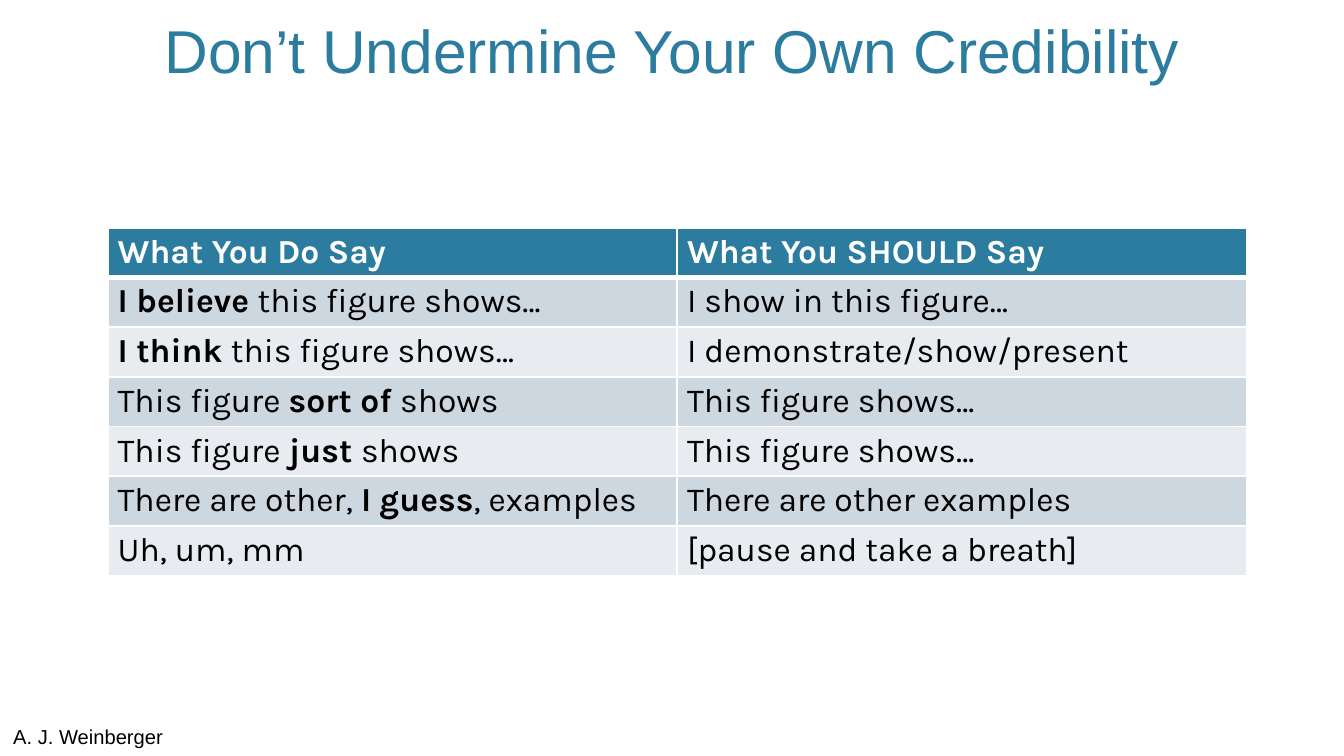
from lxml import etree
from pptx import Presentation
from pptx.dml.color import RGBColor
from pptx.enum import text as t
from pptx.oxml import ns
from pptx.util import Pt

COLORS = {"teal": "2C7C9F", "white": "FFFFFF", "black": "000000",
          "dark_band": "CDD7DF", "light_band": "E8ECF0"}

# Asterisks enclose bold words.
PHRASES = [
    ("*What You Do Say*", "*What You SHOULD Say*"),
    ("*I believe *this figure shows…", "I show in this figure…"),
    ("*I think *this figure shows…", "I demonstrate/show/present"),
    ("This figure *sort of *shows", "This figure shows…"),
    ("This figure* just *shows", "This figure shows…"),
    ("There are other, *I guess*, examples", "There are other examples"),
    ("Uh, um, mm", "[pause and take a breath]"),
]


def color(name):
    return RGBColor.from_string(COLORS[name])


def set_attributes(target, values):
    for name, value in values.items():
        setattr(target, name, value)


def write_runs(paragraph, marked_text, size, font_name, color_name):
    """Add the text as runs, in bold between asterisks."""
    for index, part in enumerate(marked_text.split("*")):
        if part:
            run = paragraph.add_run()
            run.text = part
            set_attributes(run.font, {"size": Pt(size), "name": font_name,
                                      "bold": index % 2 == 1})
            run.font.color.rgb = color(color_name)


def add_label(slide, box, label, size, color_name, alignment, anchor):
    frame = slide.shapes.add_textbox(*map(Pt, box)).text_frame
    set_attributes(frame, {"word_wrap": True, "vertical_anchor": anchor})
    paragraph = frame.paragraphs[0]
    paragraph.alignment = alignment
    write_runs(paragraph, label, size, "Arial", color_name)


def add_borders(cell, widths):
    properties = cell._tc.get_or_add_tcPr()
    for side, width in widths.items():
        line = etree.SubElement(properties, ns.qn(f"a:ln{side}"), w=str(Pt(width)))
        fill = etree.SubElement(line, ns.qn("a:solidFill"))
        etree.SubElement(fill, ns.qn("a:srgbClr"), val=COLORS["white"])


def add_phrase_table(slide, box):
    table = slide.shapes.add_table(len(PHRASES), 2, *map(Pt, box)).table
    for row_index, phrases in enumerate(PHRASES):
        is_header = row_index == 0
        band = "teal" if is_header else ("light_band", "dark_band")[row_index % 2]
        for column_index, phrase in enumerate(phrases):
            cell = table.cell(row_index, column_index)
            set_attributes(cell, {"margin_left": Pt(5.3), "margin_right": Pt(5.3),
                                  "margin_top": Pt(2.5), "margin_bottom": Pt(2.5)})
            add_borders(cell, {"L": 1, "R": 1, "T": 3 if row_index == 1 else 1,
                               "B": 3 if is_header else 1})
            cell.fill.solid()
            cell.fill.fore_color.rgb = color(band)
            write_runs(cell.text_frame.paragraphs[0], phrase, 18, "Karla",
                       "white" if is_header else "black")


def main():
    presentation = Presentation()
    set_attributes(presentation, {"slide_width": Pt(720), "slide_height": Pt(405)})
    slide = presentation.slides.add_slide(presentation.slide_layouts[6])
    add_label(slide, (0, 384.5, 156, 20), "A. J. Weinberger", 10.8, "black",
              t.PP_ALIGN.LEFT, t.MSO_ANCHOR.TOP)
    add_label(slide, (75, 6.5, 570, 43), "Don’t Undermine Your Own Credibility", 32.4,
              "teal", t.PP_ALIGN.CENTER, t.MSO_ANCHOR.BOTTOM)
    add_phrase_table(slide, (57.8, 122, 610, 185.5))
    presentation.save("out.pptx")


if __name__ == "__main__":
    main()
